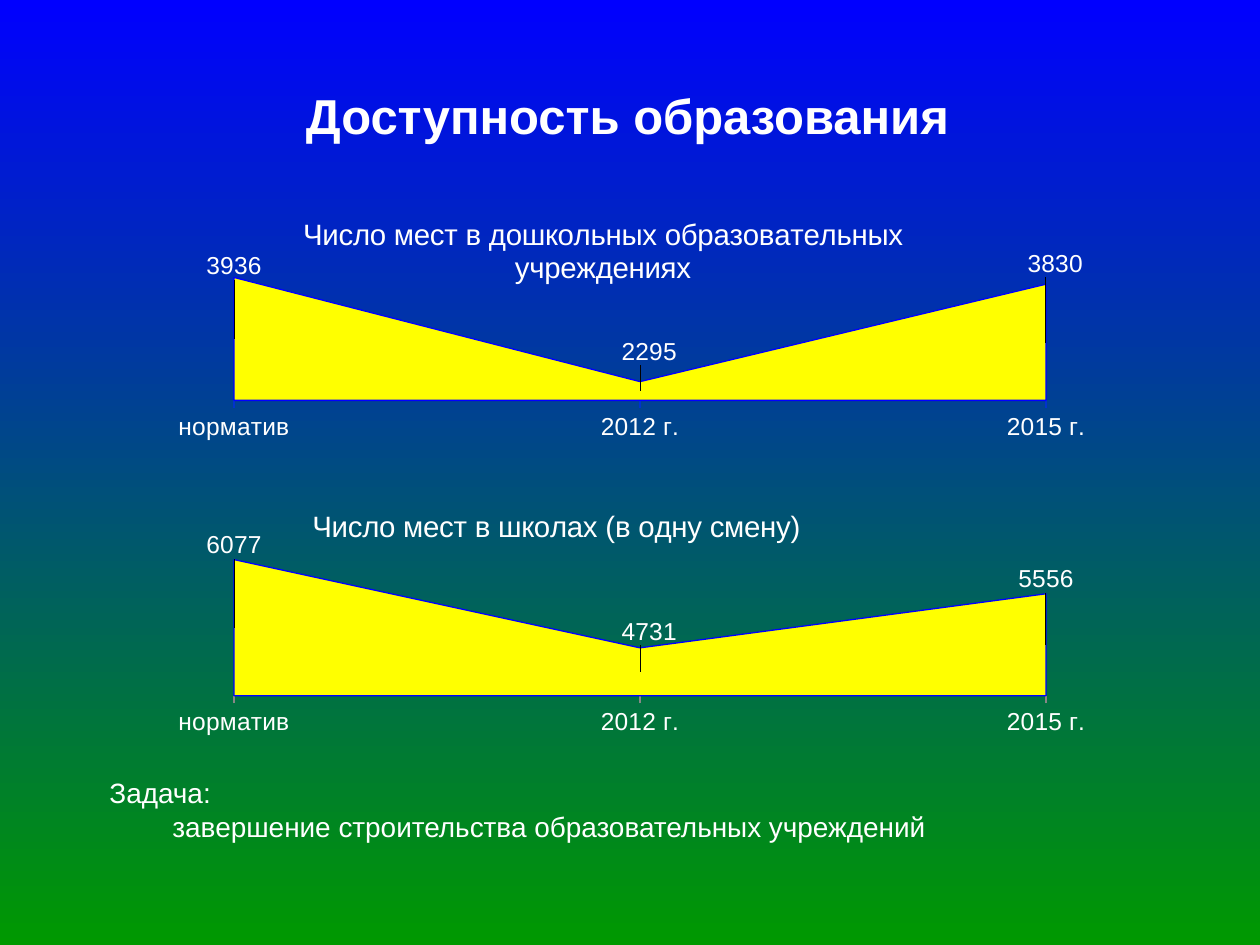
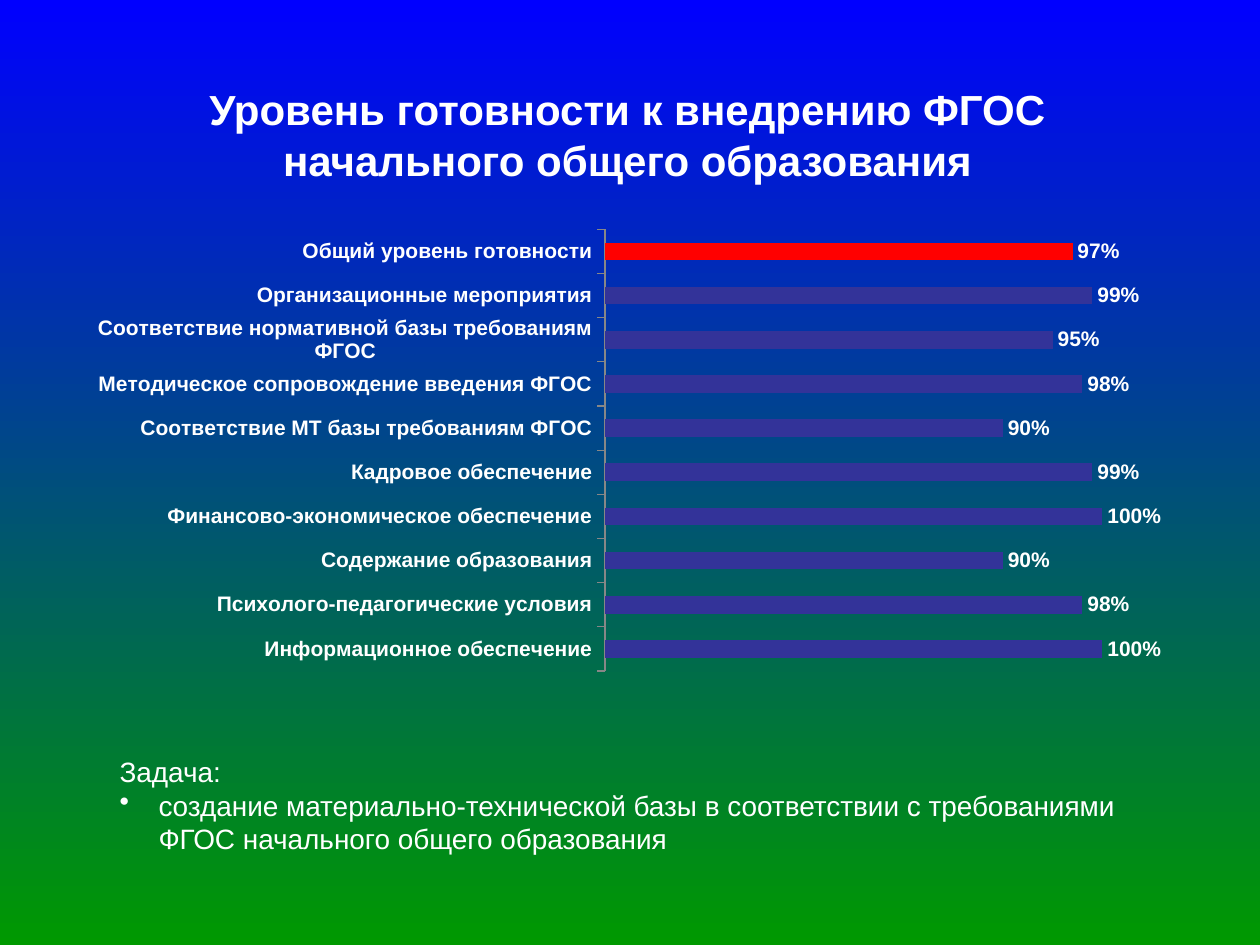
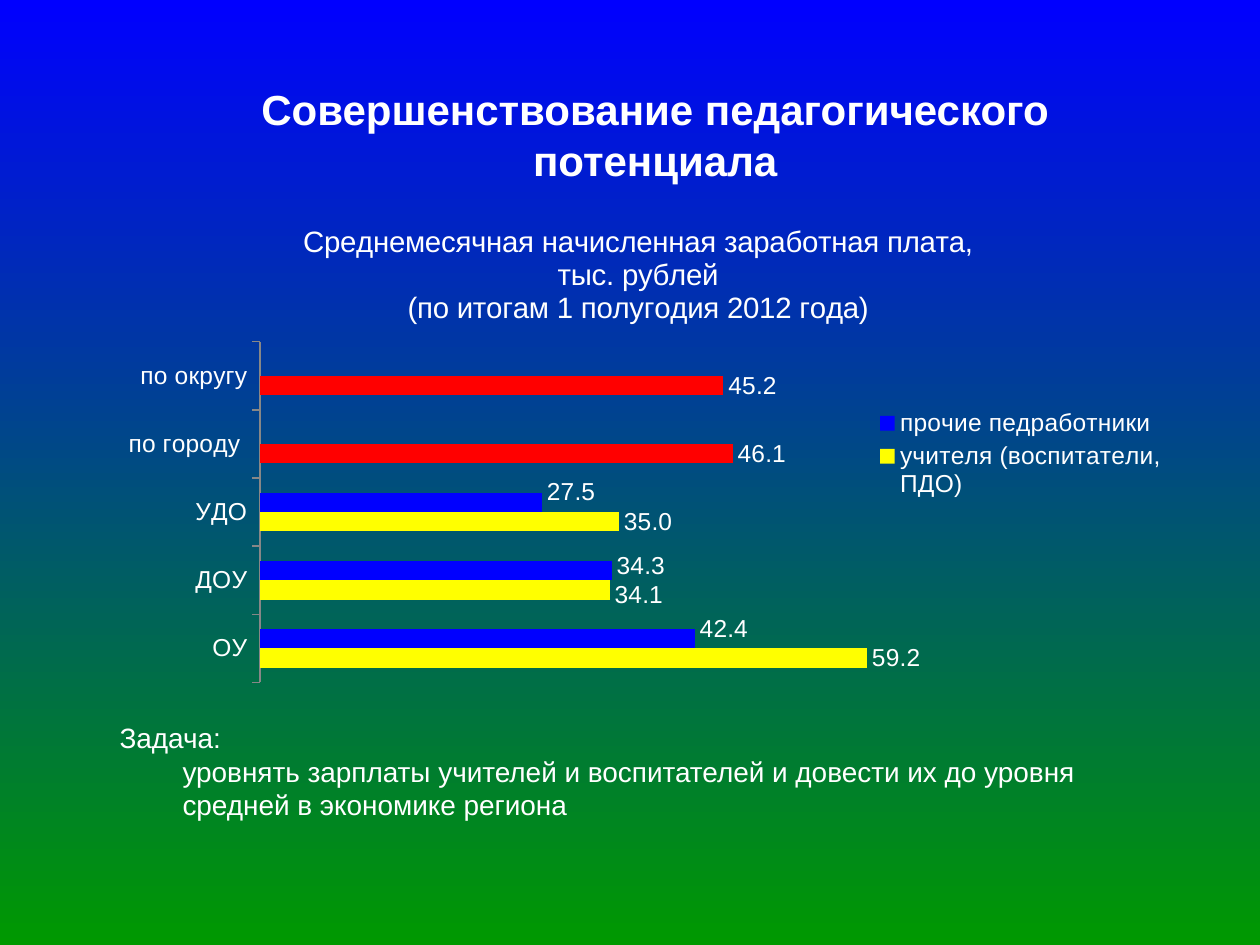
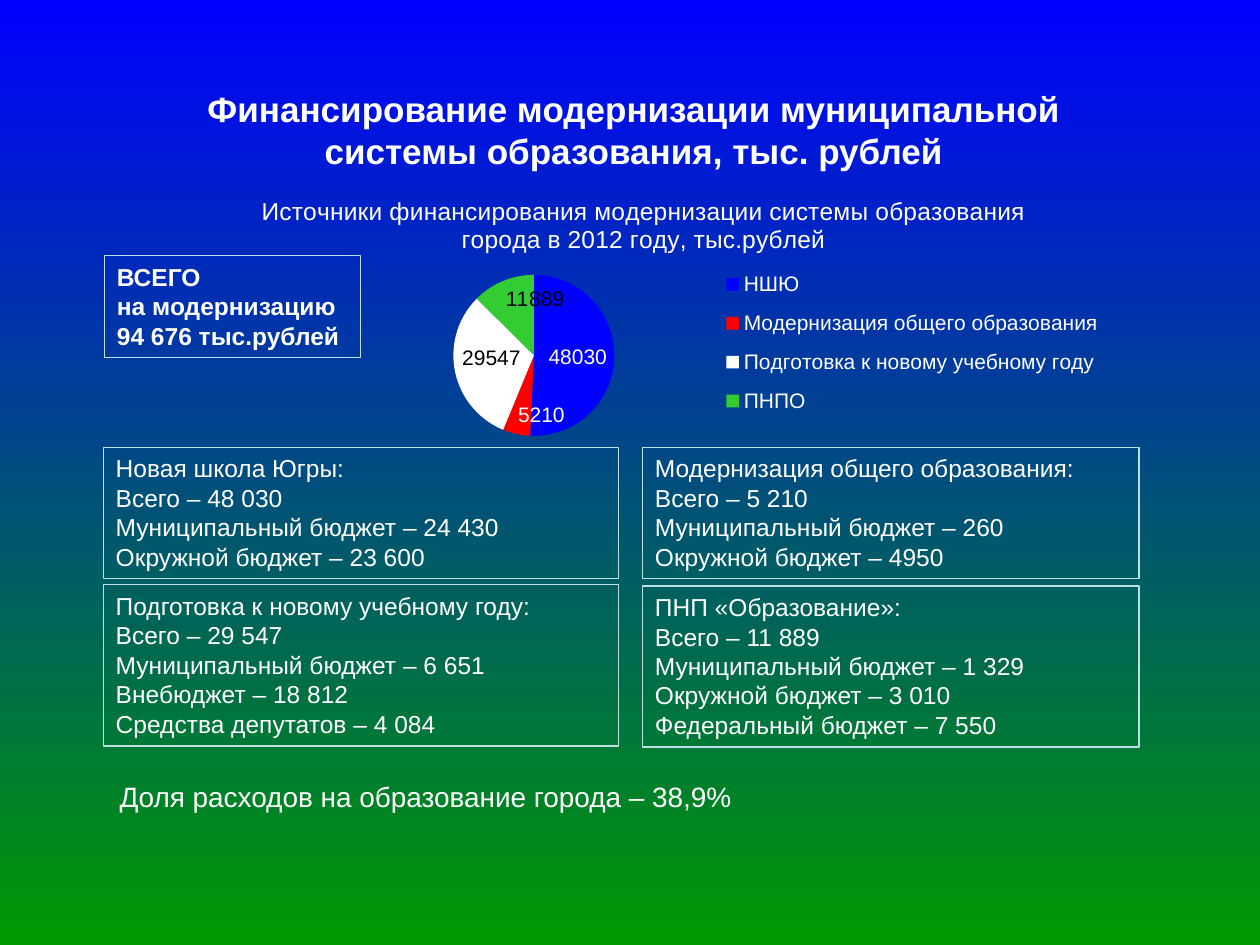
from lxml import etree
from pptx import Presentation
from pptx.chart.data import CategoryChartData
from pptx.dml.color import RGBColor
from pptx.enum.chart import (XL_CHART_TYPE, XL_LABEL_POSITION, XL_LEGEND_POSITION,
                             XL_TICK_LABEL_POSITION, XL_TICK_MARK)
from pptx.enum.shapes import MSO_SHAPE
from pptx.enum.text import MSO_ANCHOR, MSO_AUTO_SIZE, PP_ALIGN
from pptx.oxml.ns import qn
from pptx.util import Inches, Pt

FONT = "Arial"
COLORS = {name: RGBColor.from_string(value) for name, value in {
    "blue": "0000FF", "green": "009900", "white": "FFFFFF", "black": "000000",
    "yellow": "FFFF00", "red": "FF0000", "indigo": "333399", "axis": "0033CC",
    "lime": "33CC33", "frame": "BBE0E3"}.items()}


def set_layout(parent, index, mode="edge", **place):
    """Give a chart part a manual layout in fractions of the chart; index is its child position.

    Mode "edge" places the part, mode "factor" shifts it from its usual place.
    """
    for old in parent.findall(qn("c:layout")):
        parent.remove(old)
    layout = etree.Element(qn("c:layout"))
    manual = etree.SubElement(layout, qn("c:manualLayout"))
    if index == 0:
        etree.SubElement(manual, qn("c:layoutTarget"), val="inner")
    for key in "xy":
        etree.SubElement(manual, qn(f"c:{key}Mode"), val=mode)
    for key, value in place.items():
        etree.SubElement(manual, qn(f"c:{key}"), val=str(value))
    parent.insert(index, layout)


def add_chart(s, kind, box, cats, series, size, plot, title=None, legend=None):
    """Add a chart; title is (text, size, x, y), plot and legend are (x, y, w, h)."""
    data = CategoryChartData()
    data.categories = cats
    for name, values in series:
        data.add_series(name, values)
    chart = s.shapes.add_chart(kind, *map(Inches, box), data).chart
    chart.font.name = FONT
    chart.font.size = Pt(size)
    chart.font.color.rgb = COLORS["white"]
    chart.has_title = title is not None
    if title:
        text, title_size, x, y = title
        tf = chart.chart_title.text_frame
        tf.text = text
        for p in tf.paragraphs:
            p.font.name = FONT
            p.font.size = Pt(title_size)
            p.font.bold = False
            p.font.color.rgb = COLORS["white"]
        set_layout(chart.chart_title._element, 1, x=x, y=y)
    chart.has_legend = legend is not None
    if legend:
        chart.legend.position = XL_LEGEND_POSITION.RIGHT
        chart.legend.include_in_layout = False
        set_layout(chart.legend._element, 1, **dict(zip("xywh", legend)))
    plot_area = chart._chartSpace.chart.plotArea
    set_layout(plot_area, 0, **dict(zip("xywh", plot)))
    chart.plots[0].vary_by_categories = False
    for ser in chart.plots[0].series:
        ser.data_labels.show_value = True
    if kind != XL_CHART_TYPE.PIE:
        chart.value_axis.has_major_gridlines = False
        chart.category_axis.major_tick_mark = XL_TICK_MARK.OUTSIDE
        chart.category_axis.minor_tick_mark = XL_TICK_MARK.NONE
    return chart


prs = Presentation()
prs.slide_width, prs.slide_height = Inches(10), Inches(7.5)

fill = prs.slide_master.background.fill
fill.gradient()
fill.gradient_angle = 270
for stop, color in zip(fill.gradient_stops, ("blue", "green")):
    stop.color.rgb = COLORS[color]

# Titles: text, size, left, top, height
titles = [
    ("Доступность образования", 28, 1.16, 0.65, 0.53),
    ("Уровень готовности к внедрению ФГОС начального общего образования", 24, 1.16, 0.7, 0.73),
    ("Совершенствование педагогического потенциала", 24, 1.38, 0.7, 0.73),
    ("Финансирование модернизации муниципальной системы образования, тыс. рублей",
     20, 1.21, 0.76, 0.53),
]
for text, size, left, top, height in titles:
    s = prs.slides.add_slide(prs.slide_layouts[5])
    sp = s.shapes.title
    sp.left, sp.top, sp.width, sp.height = map(Inches, (left, top, 7.64, height))
    tf = sp.text_frame
    tf.text = text
    tf.auto_size = MSO_AUTO_SIZE.NONE
    tf.vertical_anchor = MSO_ANCHOR.MIDDLE
    p = tf.paragraphs[0]
    p.alignment = PP_ALIGN.CENTER
    p.font.name = FONT
    p.font.size = Pt(size)
    p.font.bold = True
    p.font.color.rgb = COLORS["white"]
access, readiness, salaries, funding = prs.slides

# Task notes: slide, left, top, height, lines, left margin and first-line indent of the second line
tasks = [
    (access, 0.77, 6.11, 0.64,
     ["Задача:", "завершение строительства образовательных учреждений"], 0.5, 0),
    (readiness, 0.85, 5.94, 0.91,
     ["Задача:", "создание материально-технической базы в соответствии с требованиями "
      "ФГОС начального общего образования"], 0.31, -0.31),
    (salaries, 0.85, 5.67, 0.91,
     ["Задача:", "уровнять зарплаты учителей и воспитателей и довести их до уровня "
      "средней в экономике региона"], 0.5, 0),
    (funding, 0.85, 6.14, 0.37, ["Доля расходов на образование города – 38,9%"], 0, 0),
]
for s, left, top, height, lines, margin, indent in tasks:
    tf = s.shapes.add_textbox(*map(Inches, (left, top, 8.48, height))).text_frame
    tf.word_wrap = True
    tf.text = "\n".join(lines)
    for p in tf.paragraphs:
        p.font.name = FONT
        p.font.size = Pt(16)
        p.font.color.rgb = COLORS["white"]
    for p in tf.paragraphs[1:]:
        pPr = p._p.get_or_add_pPr()
        pPr.set("marL", str(Inches(margin)))
        pPr.set("indent", str(Inches(indent)))
        if indent:
            bullet = etree.Element(qn("a:buChar"), char="•")
            pPr.insert(0, bullet)
        else:
            p.level = 1

# Slide 1: places in kindergartens and schools
places = [
    ((1.41, 1.34, 7.34, 2.22), (3936, 2295, 3830), 2000, 4000, (0.061, 0.374, 0.878, 0.454),
     ("Число мест в дошкольных образовательных учреждениях", 16.8, 0.13, 0.15)),
    ((1.41, 3.65, 7.34, 2.26), (6077, 4731, 5556), 4000, 6500, (0.061, 0.253, 0.878, 0.576),
     ("Число мест в школах (в одну смену)", 16.8, 0.14, 0.15)),
]
area_series = []
for box, values, low, high, plot, title in places:
    chart = add_chart(access, XL_CHART_TYPE.AREA, box, ["норматив", "2012 г.", "2015 г."],
                      [("Число мест", values)], 14, plot, title)
    axis = chart.value_axis
    axis.minimum_scale, axis.maximum_scale = low, high
    axis.tick_label_position = XL_TICK_LABEL_POSITION.NONE
    axis.format.line.fill.background()
    axis._element.find(qn("c:crossBetween")).set("val", "midCat")
    ser = chart.plots[0].series[0]
    ser.format.fill.solid()
    ser.format.fill.fore_color.rgb = COLORS["yellow"]
    ser.format.line.color.rgb = COLORS["blue"]
    ser.format.line.width = Pt(0.75)
    area_series.append(ser)
    if low == 2000:
        chart.category_axis.format.line.color.rgb = COLORS["axis"]
        chart.category_axis.format.line.width = Pt(0.75)

# Slide 2: readiness by area
levels = {
    "Общий уровень готовности": 0.97,
    "Организационные мероприятия": 0.99,
    "Соответствие нормативной базы требованиям ФГОС": 0.95,
    "Методическое сопровождение введения ФГОС": 0.98,
    "Соответствие МТ базы требованиям ФГОС": 0.9,
    "Кадровое обеспечение": 0.99,
    "Финансово-экономическое обеспечение": 1,
    "Содержание образования": 0.9,
    "Психолого-педагогические условия": 0.98,
    "Информационное обеспечение": 1,
}
readiness_chart = add_chart(
    readiness, XL_CHART_TYPE.BAR_CLUSTERED, (0.67, 1.68, 8.66, 4.13), list(levels),
    [("Готовность", list(levels.values()))], 12, (0.477, 0.034, 0.456, 0.849))
readiness_chart.font.bold = True
readiness_chart.category_axis.reverse_order = True
readiness_chart.value_axis.minimum_scale = 0.5
readiness_chart.value_axis.maximum_scale = 1

# Slide 3: salaries
salary_chart = add_chart(
    salaries, XL_CHART_TYPE.BAR_CLUSTERED, (0.85, 1.63, 8.48, 3.94),
    ["ОУ", "ДОУ", "УДО", "по городу ", "по округу"],
    [("учителя (воспитатели, ПДО)", (59.2, 34.1, 35, 46.1, 45.2)),
     ("прочие педработники", (42.4, 34.3, 27.5, None, None))],
    14, (0.143, 0.275, 0.672, 0.686),
    ("Среднемесячная начисленная заработная плата,\nтыс. рублей\n"
     "(по итогам 1 полугодия 2012 года)", 16.8, 0.18, 0.03),
    (0.72, 0.4, 0.27, 0.2))
salary_chart.value_axis.minimum_scale = 0
salary_chart.value_axis.maximum_scale = 70

# Bars: chart, series colours, label format, highlighted points of the first series
bars = [(readiness_chart, ["indigo"], "0%", [0]),
        (salary_chart, ["yellow", "blue"], "#,##0.0", [3, 4])]
for chart, colors, number_format, highlights in bars:
    chart.value_axis.visible = False
    plot = chart.plots[0]
    plot.gap_width = 150
    for ser, color in zip(plot.series, colors):
        ser.format.fill.solid()
        ser.format.fill.fore_color.rgb = COLORS[color]
        ser.data_labels.number_format = number_format
        ser.data_labels.number_format_is_linked = False
        ser.data_labels.position = XL_LABEL_POSITION.OUTSIDE_END
    for i in highlights:
        point_fill = plot.series[0].points[i].format.fill
        point_fill.solid()
        point_fill.fore_color.rgb = COLORS["red"]

# Slide 4: funding sources
pie = add_chart(
    funding, XL_CHART_TYPE.PIE, (1.18, 1.43, 7.82, 2.17),
    ["НШЮ", "Модернизация общего образования", "Подготовка к новому учебному году", "ПНПО"],
    [("Источники", (48030, 5210, 29547, 11889))], 12, (0.085, 0.347, 0.612, 0.589),
    ("Источники финансирования модернизации системы образования города "
     "в 2012 году, тыс.рублей", 14, 0.11, 0.04),
    (0.57, 0.28, 0.41, 0.63))
pie.plots[0].vary_by_categories = True
pie_series = pie.plots[0].series[0]
pie_series.data_labels.position = XL_LABEL_POSITION.INSIDE_END
slices = [("blue", "white"), ("red", "white"), ("white", "black"), ("lime", "black")]
for i, (color, label_color) in enumerate(slices):
    point = pie_series.points[i]
    point.format.fill.solid()
    point.format.fill.fore_color.rgb = COLORS[color]
    label = point.data_label
    label.font.size = Pt(12)
    label.font.color.rgb = COLORS[label_color]
    label.position = XL_LABEL_POSITION.INSIDE_END

# Label shifts that keep values readable: series, label position, {point: (x, y)}
teachers, others = salary_chart.plots[0].series
shifts = [
    (area_series[0], None, {0: (0, -0.26), 1: (0.01, -0.14), 2: (0.01, -0.28)}),
    (area_series[1], None, {0: (0, -0.29), 1: (0.01, -0.14), 2: (0, -0.23)}),
    (teachers, XL_LABEL_POSITION.OUTSIDE_END, {1: (0, 0.01)}),
    (others, XL_LABEL_POSITION.OUTSIDE_END, {0: (0, -0.02), 1: (0, -0.01), 2: (0, -0.02)}),
]
for ser, position, offsets in shifts:
    for i, (x, y) in offsets.items():
        label = ser.points[i].data_label
        label.font.name = FONT
        label.font.size = Pt(14)
        label.font.color.rgb = COLORS["white"]
        label.position = position
        set_layout(label._get_or_add_dLbl(), 1, "factor", x=x, y=y)

budgets = [
    ((0.82, 3.55, 4.09, 1.04), False,
     ["Новая школа Югры:", "Всего – 48 030", "Муниципальный бюджет – 24 430",
      "Окружной бюджет – 23 600"]),
    ((5.1, 3.55, 3.94, 1.04), False,
     ["Модернизация общего образования:", "Всего – 5 210", "Муниципальный бюджет – 260",
      "Окружной бюджет – 4950"]),
    ((0.82, 4.64, 4.09, 1.28), False,
     ["Подготовка к новому учебному году:", "Всего – 29 547", "Муниципальный бюджет – 6 651",
      "Внебюджет – 18 812", "Средства депутатов – 4 084"]),
    ((5.1, 4.65, 3.94, 1.28), False,
     ["ПНП «Образование»:", "Всего – 11 889", "Муниципальный бюджет – 1 329",
      "Окружной бюджет – 3 010", "Федеральный бюджет – 7 550"]),
    ((0.83, 2.03, 2.03, 0.81), True, ["ВСЕГО", "на модернизацию", "94 676 тыс.рублей"]),
]
for box, bold, lines in budgets:
    sp = funding.shapes.add_shape(MSO_SHAPE.RECTANGLE, *map(Inches, box))
    sp.shadow.inherit = False
    sp.fill.background()
    sp.line.color.rgb = COLORS["frame"]
    sp.line.width = Pt(0.75)
    tf = sp.text_frame
    tf.word_wrap = True
    tf.vertical_anchor = MSO_ANCHOR.TOP
    tf.text = "\n".join(lines)
    for p in tf.paragraphs:
        p.alignment = PP_ALIGN.LEFT
        p.font.name = FONT
        p.font.size = Pt(14)
        p.font.bold = bold
        p.font.color.rgb = COLORS["white"]

prs.save("out.pptx")
